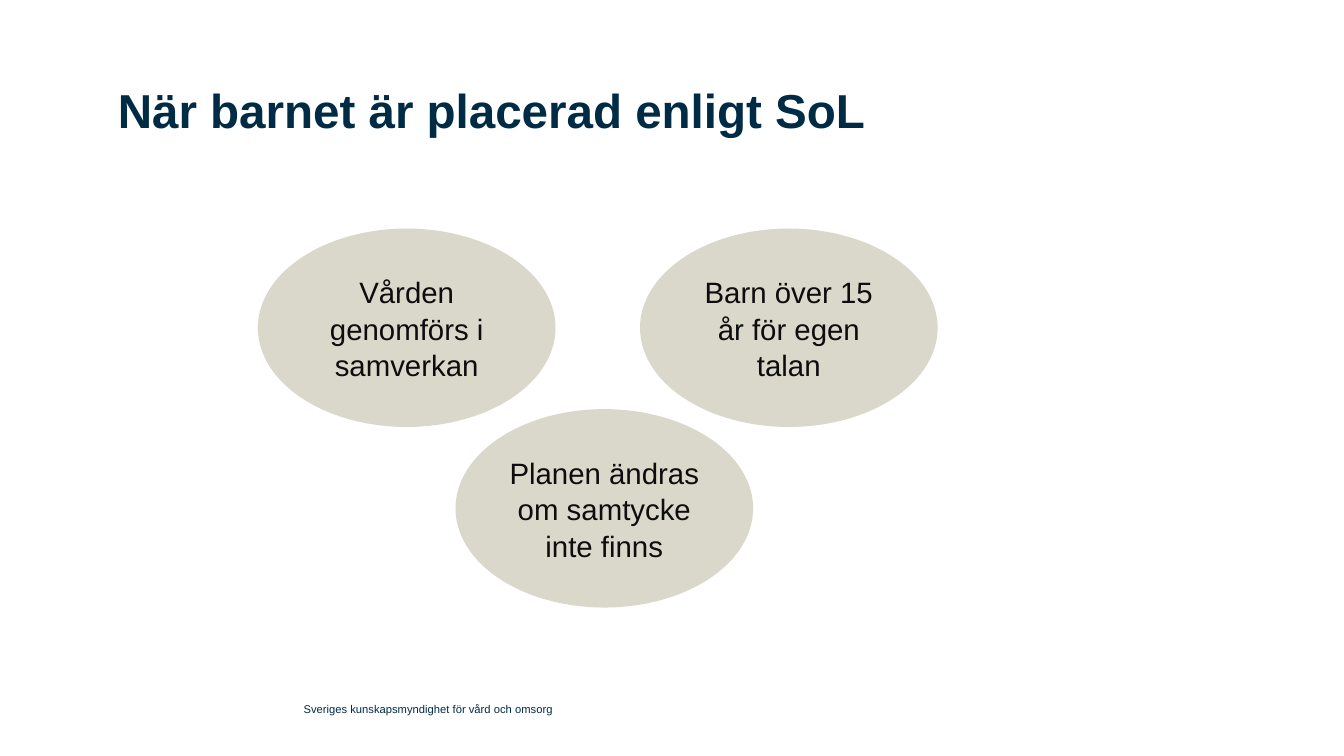
from pptx import Presentation
from pptx.dml.color import RGBColor
from pptx.enum import shapes, text
from pptx.util import Cm, Pt

NAVY = RGBColor(0x00, 0x2B, 0x45)
SAND = RGBColor(0xDA, 0xD7, 0xCB)
BLACK = RGBColor(0x0D, 0x0D, 0x0D)
FONT = "Arial"

TITLE = "När barnet är placerad enligt SoL"
FOOTER = "Sveriges kunskapsmyndighet för vård och omsorg"
# Text, left and top in cm
ELLIPSES = [
    ("Vården genomförs i samverkan", 6.5, 5.76),
    ("Barn över 15 år för egen talan", 16.13, 5.76),
    ("Planen ändras om samtycke inte finns", 11.48, 10.31),
]
ELLIPSE_WIDTH, ELLIPSE_HEIGHT = Cm(7.5), Cm(5)


def write(shape, content, size, color, bold=False, spacing=1.0):
    frame = shape.text_frame
    frame.word_wrap = True
    paragraph = frame.paragraphs[0]
    paragraph.line_spacing = spacing
    run = paragraph.add_run()
    run.text = content
    run.font.name = FONT
    run.font.size = Pt(size)
    run.font.bold = bold
    run.font.color.rgb = color
    return frame


def add_label(slide, left, top, width, height):
    """Add a text box without inner margins."""
    label = slide.shapes.add_textbox(Cm(left), Cm(top), Cm(width), Cm(height))
    frame = label.text_frame
    frame.margin_left = frame.margin_right = 0
    frame.margin_top = frame.margin_bottom = 0
    return label


def add_ellipse(slide, content, left, top):
    ellipse = slide.shapes.add_shape(
        shapes.MSO_SHAPE.OVAL, Cm(left), Cm(top), ELLIPSE_WIDTH, ELLIPSE_HEIGHT)
    ellipse.shadow.inherit = False
    ellipse.fill.solid()
    ellipse.fill.fore_color.rgb = SAND
    ellipse.line.fill.background()
    frame = write(ellipse, content, 21, BLACK, spacing=1.04)
    frame.vertical_anchor = text.MSO_ANCHOR.MIDDLE
    frame.paragraphs[0].alignment = text.PP_ALIGN.CENTER


def main():
    presentation = Presentation()
    presentation.slide_width, presentation.slide_height = Cm(33.87), Cm(19.05)
    slide = presentation.slides.add_slide(presentation.slide_layouts[6])

    title = add_label(slide, 2.97, 1.9, 25.3, 3.6)
    write(title, TITLE, 34, NAVY, bold=True, spacing=1.1)

    footer = add_label(slide, 7.65, 17.5, 15, 0.74)
    frame = write(footer, FOOTER, 8, NAVY)
    frame.vertical_anchor = text.MSO_ANCHOR.MIDDLE

    for content, left, top in ELLIPSES:
        add_ellipse(slide, content, left, top)

    presentation.save("out.pptx")


if __name__ == "__main__":
    main()
